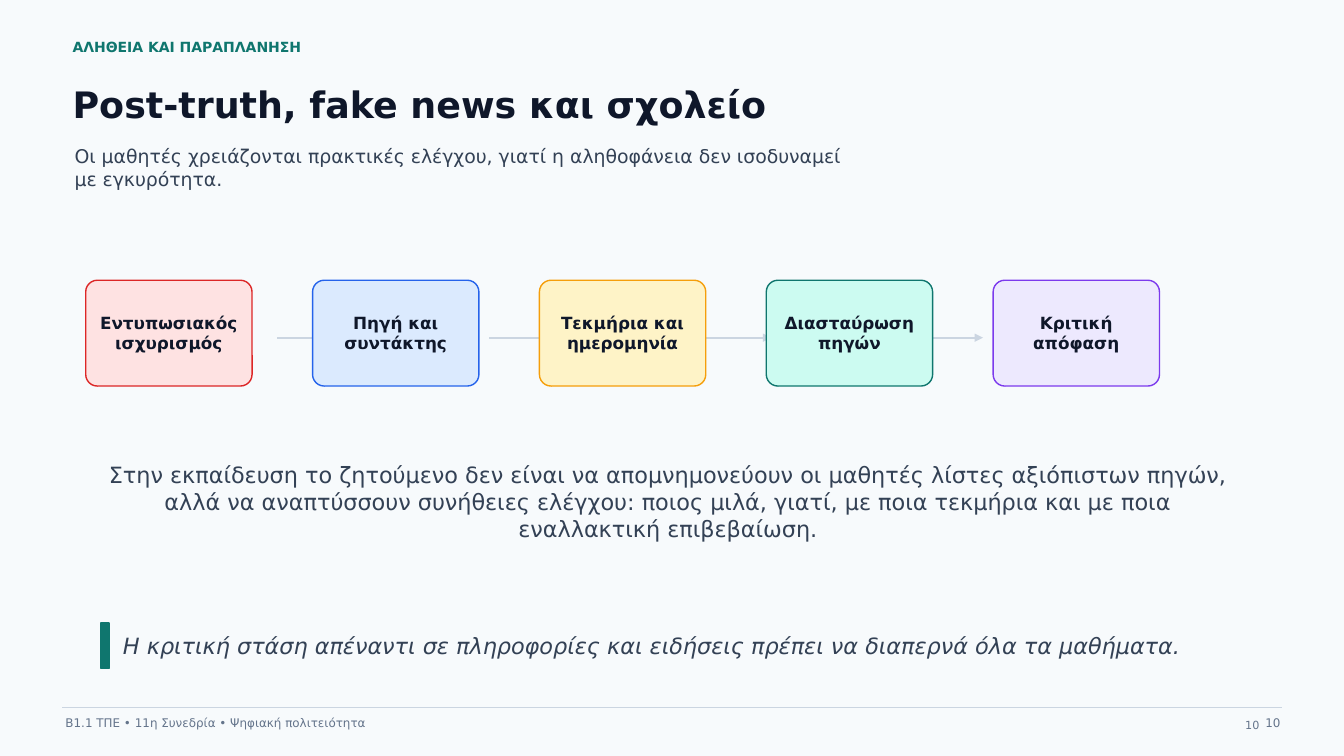
from lxml.etree import SubElement
from pptx import Presentation
from pptx.dml.color import RGBColor
from pptx.enum.shapes import MSO_CONNECTOR, MSO_SHAPE
from pptx.enum.text import MSO_ANCHOR, PP_ALIGN
from pptx.oxml.ns import qn
from pptx.util import Pt

PX = 9144
FONT = "DejaVu Sans"
BACKGROUND = RGBColor(0xF7, 0xFA, 0xFC)
INK = RGBColor(0x0F, 0x17, 0x2A)
BODY = RGBColor(0x33, 0x41, 0x55)
MUTED = RGBColor(0x64, 0x74, 0x8B)
RULE = RGBColor(0xCB, 0xD5, 0xE1)
TEAL = RGBColor(0x0F, 0x76, 0x6E)
TEAL_LIGHT = RGBColor(0xCC, 0xFB, 0xF1)
RED = RGBColor(0xDC, 0x26, 0x26)
RED_LIGHT = RGBColor(0xFE, 0xE2, 0xE2)
BLUE = RGBColor(0x25, 0x63, 0xEB)
BLUE_LIGHT = RGBColor(0xDB, 0xEA, 0xFE)
AMBER = RGBColor(0xF5, 0x9E, 0x0B)
AMBER_LIGHT = RGBColor(0xFE, 0xF3, 0xC7)
VIOLET = RGBColor(0x7C, 0x3A, 0xED)
VIOLET_LIGHT = RGBColor(0xED, 0xE9, 0xFE)


def write(sp, lines, size, color, align=PP_ALIGN.LEFT, bold=False, italic=False):
    tf = sp.text_frame
    tf.word_wrap = True
    tf.vertical_anchor = MSO_ANCHOR.MIDDLE
    tf.margin_left = tf.margin_top = tf.margin_right = tf.margin_bottom = 0
    tf.text = "\n".join(lines)
    for p in tf.paragraphs:
        p.alignment = align
        p.font.name = FONT
        p.font.size = Pt(size)
        p.font.color.rgb = color
        p.font.bold = bold
        p.font.italic = italic


def add_line(x1, x2, y, width):
    ln = s.shapes.add_connector(MSO_CONNECTOR.STRAIGHT, x1 * PX, y * PX, x2 * PX, y * PX)
    ln.line.color.rgb = RULE
    ln.line.width = Pt(width)
    SubElement(ln._element.spPr, qn("a:effectLst"))
    return ln


prs = Presentation()
prs.slide_width = 1333 * PX
prs.slide_height = 750 * PX
s = prs.slides.add_slide(prs.slide_layouts[6])
s.background.fill.solid()
s.background.fill.fore_color.rgb = BACKGROUND

add_line(62, 1272, 702, 0.8)
for i in range(4):
    arrow = add_line(275 + 210 * i, 345 + 210 * i, 335, 1.3)
    SubElement(arrow.line._get_or_add_ln(), qn("a:tailEnd"), type="triangle")

steps = [
    (["Εντυπωσιακός", "ισχυρισμός"], RED_LIGHT, RED),
    (["Πηγή και", "συντάκτης"], BLUE_LIGHT, BLUE),
    (["Τεκμήρια και", "ημερομηνία"], AMBER_LIGHT, AMBER),
    (["Διασταύρωση", "πηγών"], TEAL_LIGHT, TEAL),
    (["Κριτική", "απόφαση"], VIOLET_LIGHT, VIOLET),
]
for i, (lines, fill, outline) in enumerate(steps):
    sp = s.shapes.add_shape(
        MSO_SHAPE.ROUNDED_RECTANGLE, (85 + 225 * i) * PX, 278 * PX, 165 * PX, 105 * PX)
    sp.adjustments[0] = 0.11
    sp.shadow.inherit = False
    sp.fill.solid()
    sp.fill.fore_color.rgb = fill
    sp.line.color.rgb = outline
    sp.line.width = Pt(1)
    write(sp, lines, 12, INK, PP_ALIGN.CENTER, bold=True)

bar = s.shapes.add_shape(MSO_SHAPE.RECTANGLE, 100 * PX, 618 * PX, 8 * PX, 45 * PX)
bar.shadow.inherit = False
bar.fill.solid()
bar.fill.fore_color.rgb = TEAL
bar.line.color.rgb = TEAL
bar.line.width = Pt(1)

texts = [
    (72, 34, 460, 25, "ΑΛΗΘΕΙΑ ΚΑΙ ΠΑΡΑΠΛΑΝΗΣΗ", 10, TEAL, {"bold": True}),
    (72, 72, 780, 62, "Post-truth, fake news και σχολείο", 26, INK, {"bold": True}),
    (74, 142, 770, 48,
     "Οι μαθητές χρειάζονται πρακτικές ελέγχου, γιατί η αληθοφάνεια δεν ισοδυναμεί "
     "με εγκυρότητα.", 13.5, BODY, {}),
    (100, 445, 1125, 105,
     "Στην εκπαίδευση το ζητούμενο δεν είναι να απομνημονεύουν οι μαθητές λίστες "
     "αξιόπιστων πηγών, αλλά να αναπτύσσουν συνήθειες ελέγχου: ποιος μιλά, γιατί, "
     "με ποια τεκμήρια και με ποια εναλλακτική επιβεβαίωση.",
     16, BODY, {"align": PP_ALIGN.CENTER}),
    (122, 623, 1060, 35,
     "Η κριτική στάση απέναντι σε πληροφορίες και ειδήσεις πρέπει να διαπερνά "
     "όλα τα μαθήματα.", 16, BODY, {"italic": True}),
    (65, 708, 700, 18, "Β1.1 ΤΠΕ • 11η Συνεδρία • Ψηφιακή πολιτειότητα", 8.5, MUTED, {}),
    (1225, 708, 45, 18, "10", 8.5, MUTED, {"align": PP_ALIGN.RIGHT}),
    (1235, 713, 67, 13, "10", 8, MUTED, {}),
]
for x, y, w, h, text, size, color, style in texts:
    tb = s.shapes.add_textbox(x * PX, y * PX, w * PX, h * PX)
    write(tb, [text], size, color, **style)

prs.save("out.pptx")
